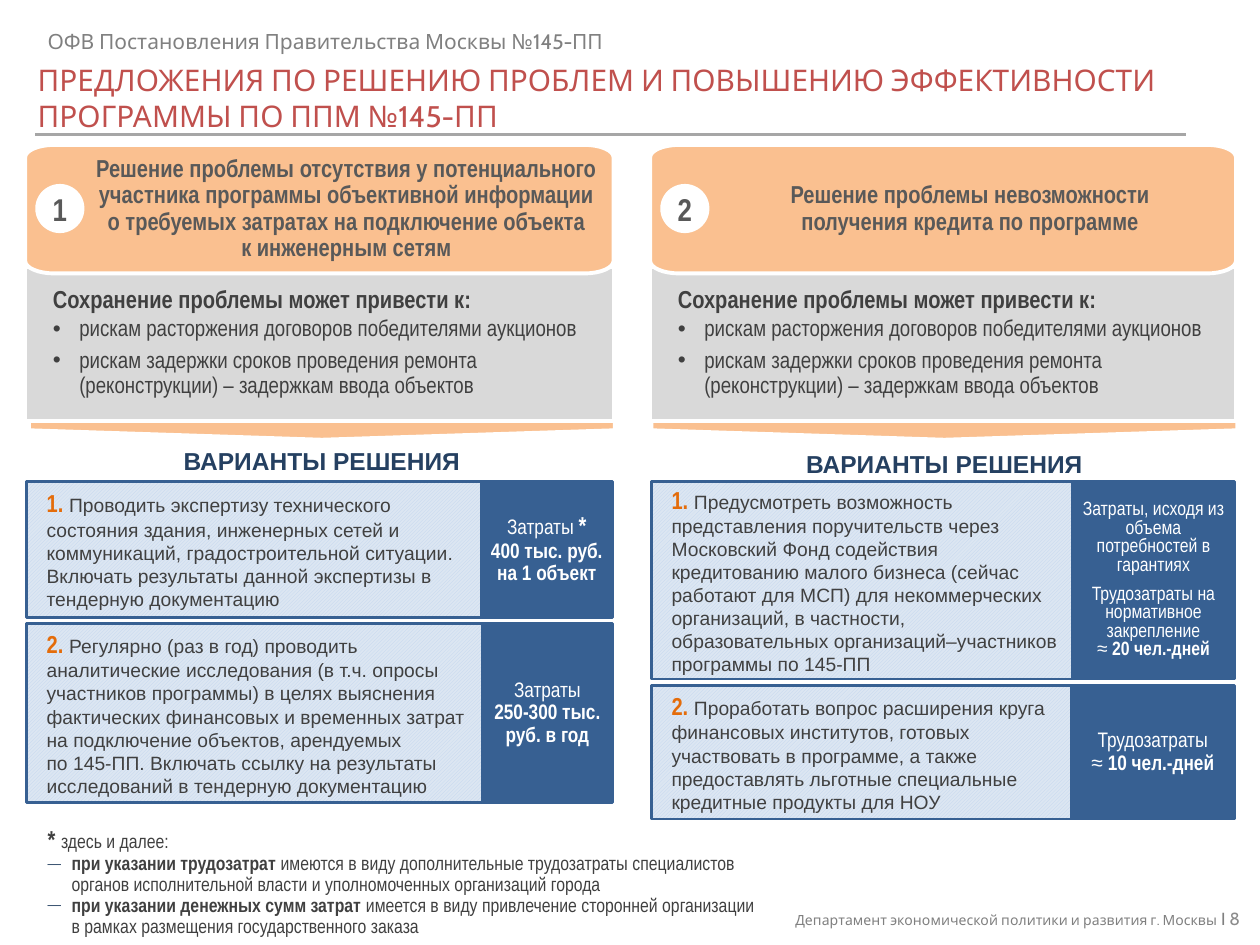
from math import cos, pi, sin

from lxml import etree
from pptx import Presentation
from pptx.dml.color import RGBColor
from pptx.enum.dml import MSO_PATTERN
from pptx.enum.shapes import MSO_CONNECTOR, MSO_SHAPE
from pptx.enum.text import MSO_ANCHOR, PP_ALIGN
from pptx.oxml.ns import qn
from pptx.util import Inches, Pt

RECT, PLATE, OVAL = MSO_SHAPE.RECTANGLE, MSO_SHAPE.PENTAGON, MSO_SHAPE.OVAL
LINE = MSO_CONNECTOR.STRAIGHT
HATCH = MSO_PATTERN.LIGHT_UPWARD_DIAGONAL
TOP, MID = MSO_ANCHOR.TOP, MSO_ANCHOR.MIDDLE
LEFT, MIDST, RIGHT = PP_ALIGN.LEFT, PP_ALIGN.CENTER, PP_ALIGN.RIGHT
SLIM, PLAIN, ROUND = "Arial Narrow", "Arial", "Cabin"
WHITE, PEACH, BLUE, NAVY = "FFFFFF", "FAC090", "376092", "254061"
DARK, GRAY, DIM, RUST = "404040", "808080", "595959", "E46C0A"


def tint(text):
    return RGBColor.from_string(text)


def style(font, size=None, face=None, hue=None, bold=None):
    if size:
        font.size = Pt(size)
    if face:
        font.name = face
    if hue:
        font.color.rgb = tint(hue)
    if bold is not None:
        font.bold = bold


def mark(props, sign, hue, size):
    if hue:
        clr = etree.SubElement(props, qn("a:buClr"))
        etree.SubElement(clr, qn("a:srgbClr"), val=hue)
    etree.SubElement(props, qn("a:buSzPct"), val=str(size * 1000))
    etree.SubElement(props, qn("a:buFont"), typeface=PLAIN)
    etree.SubElement(props, qn("a:buChar"), char=sign)


def para(*runs, align=LEFT, gap=1, sb=0, sa=0, dent=None, sign=None, **look):
    return runs, align, gap, sb, sa, dent, sign, look


def write(shape, paras, pad=(0.1, 0.05, 0.1, 0.05), anchor=MID):
    frame = shape.text_frame
    frame.word_wrap = True
    frame.vertical_anchor = anchor
    frame.margin_left, frame.margin_top, frame.margin_right, frame.margin_bottom = map(Inches, pad)
    for i, (runs, align, gap, sb, sa, dent, sign, look) in enumerate(paras):
        p = frame.add_paragraph() if i else frame.paragraphs[0]
        p.alignment, p.line_spacing = align, gap
        p.space_before, p.space_after = Pt(sb), Pt(sa)
        props = p._p.get_or_add_pPr()
        if dent:
            props.set("marL", str(Inches(dent[0])))
            props.set("indent", str(Inches(dent[1])))
        if sign:
            mark(props, *sign)
        style(p.font, **look)
        for run in runs:
            text, own = (run, {}) if isinstance(run, str) else run
            for j, part in enumerate(text.split("\n")):
                if j:
                    p.add_line_break()
                if part:
                    r = p.add_run()
                    r.text = part
                    style(r.font, **own)


def paint(shape, fill, line=None, width=1.5):
    shape.shadow.inherit = False
    shape.fill.solid()
    shape.fill.fore_color.rgb = tint(fill)
    if line:
        shape.line.color.rgb = tint(line)
        shape.line.width = Pt(width)
    else:
        shape.line.fill.background()
    return shape


def draw(slide, kind, box, fill, line=None, width=1.5):
    return paint(slide.shapes.add_shape(kind, *map(Inches, box)), fill, line, width)


def label(slide, box, *paras, **rest):
    write(slide.shapes.add_textbox(*map(Inches, box)), paras, **rest)


def banner(slide, box, num, text):
    x, y, w, h = box
    rx, ry, steps = 0.23, 0.1, 8
    hubs = [(x + w - rx, y + h - ry), (x + rx, y + h - ry), (x + rx, y + ry), (x + w - rx, y + ry)]
    dots = [(Inches(cx + rx * cos((q + k / steps) * pi / 2)), Inches(cy + ry * sin((q + k / steps) * pi / 2)))
            for q, (cx, cy) in enumerate(hubs) for k in range(steps + 1)]
    path = slide.shapes.build_freeform(*dots[0])
    path.add_line_segments(dots[1:], close=True)
    head = paint(path.convert_to_shape(), PEACH, WHITE, 2.25)
    write(head, [para(text, align=MIDST, gap=0.9, size=14, face=SLIM, hue=DIM, bold=True)],
          (0.51, 0.03, 0.08, 0.03))
    disc = draw(slide, OVAL, (x + 0.08, y + 0.31, 0.39, 0.39), WHITE)
    write(disc, [para(num, align=MIDST, size=18, face=SLIM, hue=DIM, bold=True)], (0, 0, 0, 0))


def risks(slide, box):
    base = dict(gap=0.9, dent=(0.31, -0.21), face=SLIM, hue=DARK)
    item = dict(base, sa=4, sign=("•", None, 100), size=13)
    write(draw(slide, RECT, box, "D9D9D9", WHITE, 2.25), [
        para("Сохранение проблемы может привести к:", sa=2, size=14, bold=True, **base),
        para("рискам расторжения договоров победителями аукционов", **item),
        para("рискам задержки сроков проведения ремонта (реконструкции) – задержкам ввода объектов", **item),
    ], (0.12, 0.16, 0.12, 0.08), TOP)


def card(slide, box, side, num, text, inset, costs, edge):
    x, y, w, h = box
    cost = draw(slide, RECT, (x + w - side, y, side, h), BLUE, BLUE)
    write(cost, costs, (edge, 0.04, edge, 0.04))
    body = draw(slide, PLATE, (x, y, w - side, h), WHITE, BLUE)
    body.adjustments[0] = 0
    body.fill.patterned()
    body.fill.pattern = HATCH
    body.fill.fore_color.rgb = tint("C0D5EE")
    body.fill.back_color.rgb = tint("DCE6F2")
    lead = (num + " ", dict(size=14, face=SLIM, hue=RUST, bold=True))
    write(body, [para(lead, (text, dict(size=11, face=PLAIN, hue=DARK)))], (0.16, 0.08, inset, 0.08))


def column(slide, box, num, title, drop, cards):
    x, y, w, h = box
    long, thick = 4.65, 0.15
    mid = x + w + 0.01 - long / 2
    arrow = draw(slide, PLATE, (mid - thick / 2, y + 2.265 - long / 2, thick, long), PEACH, WHITE, 2.25)
    arrow.rotation = 90
    risks(slide, (x, y + 0.97, w, 1.22))
    banner(slide, (x, y, w, 1.02), num, title)
    label(slide, (mid - long / 2, y + drop, long, 0.33),
          para("ВАРИАНТЫ РЕШЕНИЯ", align=MIDST, gap=0.9, size=14, face=PLAIN, hue=NAVY, bold=True),
          pad=(0, 0, 0, 0), anchor=MID)
    top = y + 2.67
    for i, (tall, side, text, inset, costs, edge) in enumerate(cards, 1):
        card(slide, (x + 0.01, top, w - 0.02, tall), side, f"{i}.", text, inset, costs, edge)
        top += tall + 0.05


def header(slide, box):
    x, y, w, h = box
    label(slide, (x, y + 0.26, w, 0.67),
          para("ПРЕДЛОЖЕНИЯ ПО РЕШЕНИЮ ПРОБЛЕМ И ПОВЫШЕНИЮ ЭФФЕКТИВНОСТИ ПРОГРАММЫ ПО ППМ №145-ПП",
               size=17, face=ROUND, hue="C0504D"), anchor=TOP)
    rule = slide.shapes.add_connector(LINE, *map(Inches, (x + 0.08, y + h, x + 9.21, y + h)))
    rule.line.color.rgb = tint("A6A6A6")
    rule.line.width = Pt(1.5)
    etree.SubElement(rule._element.spPr, qn("a:effectLst"))
    label(slide, (x + 0.08, y, 7.24, 0.3),
          para("ОФВ Постановления Правительства Москвы №145-ПП", size=12, face=ROUND, hue=GRAY), anchor=TOP)


def footer(slide, box):
    x, y, w, h = box
    base = dict(gap=0.9, size=11, face=SLIM, hue=DARK)
    item = dict(base, dent=(0.19, -0.19), sign=("—", NAVY, 70))
    bold = dict(bold=True)
    label(slide, (x, y, 6.12, h),
          para(("* ", dict(size=14, bold=True)), "здесь и далее:", **base),
          para(("при указании трудозатрат ", bold),
               "имеются в виду дополнительные трудозатраты специалистов органов исполнительной власти "
               "и уполномоченных организаций города", **item),
          para(("при указании денежных сумм затрат ", bold),
               "имеется в виду привлечение сторонней организации\nв рамках размещения государственного заказа",
               **item), anchor=TOP)
    label(slide, (x + w - 4.92, y + 0.69, 4.92, 0.16),
          para(("Департамент экономической политики и развития г. Москвы ", dict(size=8, hue=GRAY)),
               ("I ", dict(size=10, hue=GRAY)), ("8", dict(size=10, hue="8C8C8C")),
               align=RIGHT, face=ROUND))


def main():
    deck = Presentation()
    deck.slide_width, deck.slide_height = Inches(10), Inches(7.5)
    slide = deck.slides.add_slide(deck.slide_layouts[6])
    bold = dict(bold=True)
    cost = dict(align=MIDST, gap=0.9, size=12, face=SLIM, hue=WHITE)
    tight = dict(cost, gap=0.8, size=11)
    header(slide, (0.2, 0.18, 9.69, 0.89))
    column(slide, (0.2, 1.15, 4.67, 5.22), "1",
           "Решение проблемы отсутствия у потенциального участника программы объективной информации\n"
           "о требуемых затратах на подключение объекта\nк инженерным сетям", 2.36, [
               (1.08, 1.04, "Проводить экспертизу технического состояния здания, инженерных сетей и "
                "коммуникаций, градостроительной ситуации. Включать результаты данной экспертизы в "
                "тендерную документацию", 0.16,
                [para("Затраты ", ("*", dict(size=14, bold=True)),
                      ("\n400 тыс. руб.\nна 1 объект", bold), **cost)], 0.04),
               (1.42, 1.03, "Регулярно (раз в год) проводить аналитические исследования (в т.ч. опросы "
                "участников программы) в целях выяснения фактических финансовых и временных затрат на "
                "подключение объектов, арендуемых\nпо 145-ПП. Включать ссылку на результаты исследований "
                "в тендерную документацию", 0.04,
                [para("Затраты\n", ("250-300 тыс. руб. в год", bold), **cost)], 0.04)])
    column(slide, (5.16, 1.15, 4.65, 5.35), "2",
           "Решение проблемы невозможности\nполучения кредита по программе", 2.38, [
               (1.57, 1.29, "Предусмотреть возможность представления поручительств через Московский Фонд "
                "содействия кредитованию малого бизнеса (сейчас работают для МСП) для некоммерческих "
                "организаций, в частности, образовательных организаций–участников программы по 145-ПП", 0.08,
                [para("Затраты, исходя из объема потребностей в гарантиях", sb=3, sa=6, **tight),
                 para("Трудозатраты на нормативное закрепление\n≈ ", ("20 чел.-дней", bold), **tight)], 0.08),
               (1.06, 1.3, "Проработать вопрос расширения круга финансовых институтов, готовых участвовать "
                "в программе, а также предоставлять льготные специальные кредитные продукты для НОУ", 0.16,
                [para("Трудозатраты\n≈ ", ("10 чел.-дней", bold), **cost)], 0.08)])
    footer(slide, (0.28, 6.52, 9.66, 0.98))
    deck.save("out.pptx")


if __name__ == "__main__":
    main()
